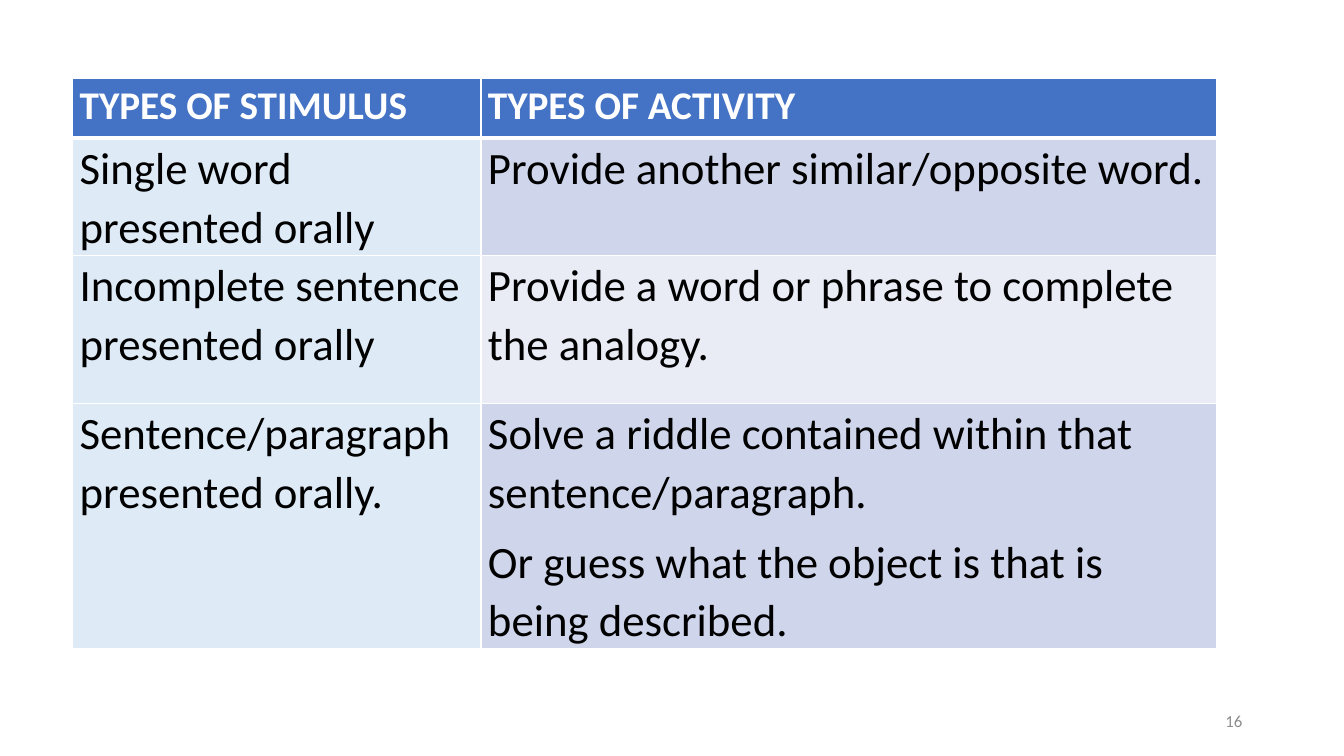
from pptx import Presentation, util as u
from pptx.dml.color import RGBColor
from pptx.enum import text
from pptx.oxml import parse_xml
from pptx.oxml.ns import nsdecls

PX = 9144
COLORS = {
    "white": "FFFFFF", "black": "000000", "header": "4472C4", "stimulus": "DEEBF7",
    "band": "CFD5EA", "light": "E9EBF5", "number": "8C8C8C",
}
HEADER_FONT = {"name": "Calibri", "size": u.Pt(28), "bold": True}
BODY_FONT = {"name": "Calibri", "size": u.Pt(32), "bold": False}
NUMBER_FONT = {"name": "Calibri", "size": u.Pt(12)}
CELL_FORMAT = {"margin_left": 7 * PX, "margin_right": 7 * PX, "margin_top": 0, "margin_bottom": 0}
PARAGRAPH_FORMAT = {"line_spacing": 1.07, "space_after": u.Pt(8)}

COLUMNS = [405, 730]
HEIGHTS = [59, 97, 147, 223]
ROWS = [
    ["TYPES OF STIMULUS", "TYPES OF ACTIVITY"],
    ["Single word presented orally", "Provide another similar/opposite word."],
    ["Incomplete sentence presented orally", "Provide a word or phrase to complete the analogy."],
    ["Sentence/paragraph presented orally.",
     "Solve a riddle contained within that sentence/paragraph.\n"
     "Or guess what the object is that is being described."],
]


def rgb(name):
    return RGBColor.from_string(COLORS[name])


def apply(target, values):
    for key, value in values.items():
        setattr(target, key, value)


def add_text(p, words, font, color):
    r = p.add_run()
    r.text = words
    apply(r.font, font)
    r.font.color.rgb = rgb(color)


def add_borders(cell, bottom):
    tcPr = cell._tc.get_or_add_tcPr()
    for side, width in {"L": 1, "R": 1, "T": 1, "B": bottom}.items():
        tcPr.append(parse_xml(
            f'<a:ln{side} {nsdecls("a")} w="{u.Pt(width)}"><a:solidFill>'
            f'<a:srgbClr val="{COLORS["white"]}"/></a:solidFill></a:ln{side}>'))


def fill_name(row, column):
    if row == 0:
        return "header"
    if column == 0:
        return "stimulus"
    return "band" if row % 2 else "light"


def add_activity_table(s, x, y):
    box = [n * PX for n in (x, y, sum(COLUMNS), sum(HEIGHTS))]
    table = s.shapes.add_table(len(ROWS), len(COLUMNS), *box).table
    for column, width in zip(table.columns, COLUMNS):
        column.width = width * PX
    for i, (height, row) in enumerate(zip(HEIGHTS, ROWS)):
        table.rows[i].height = height * PX
        font, color = (BODY_FONT, "black") if i else (HEADER_FONT, "white")
        for j, words in enumerate(row):
            cell = table.cell(i, j)
            apply(cell, CELL_FORMAT)
            add_borders(cell, 1 if i else 3)
            cell.fill.solid()
            cell.fill.fore_color.rgb = rgb(fill_name(i, j))
            tf = cell.text_frame
            for k, line in enumerate(words.split("\n")):
                p = tf.add_paragraph() if k else tf.paragraphs[0]
                apply(p, PARAGRAPH_FORMAT)
                add_text(p, line, font, color)


def add_slide_number(s, x, y, w, h):
    tf = s.shapes.add_textbox(*[n * PX for n in (x, y, w, h)]).text_frame
    apply(tf, {"word_wrap": True, "vertical_anchor": text.MSO_ANCHOR.MIDDLE})
    p = tf.paragraphs[0]
    p.alignment = text.PP_ALIGN.RIGHT
    add_text(p, "16", NUMBER_FONT, "number")


def main():
    prs = Presentation()
    prs.slide_width, prs.slide_height = 1333 * PX, 750 * PX
    s = prs.slides.add_slide(prs.slide_layouts[6])
    add_activity_table(s, 72, 78)
    add_slide_number(s, 942, 695, 300, 40)
    prs.save("out.pptx")


if __name__ == "__main__":
    main()
